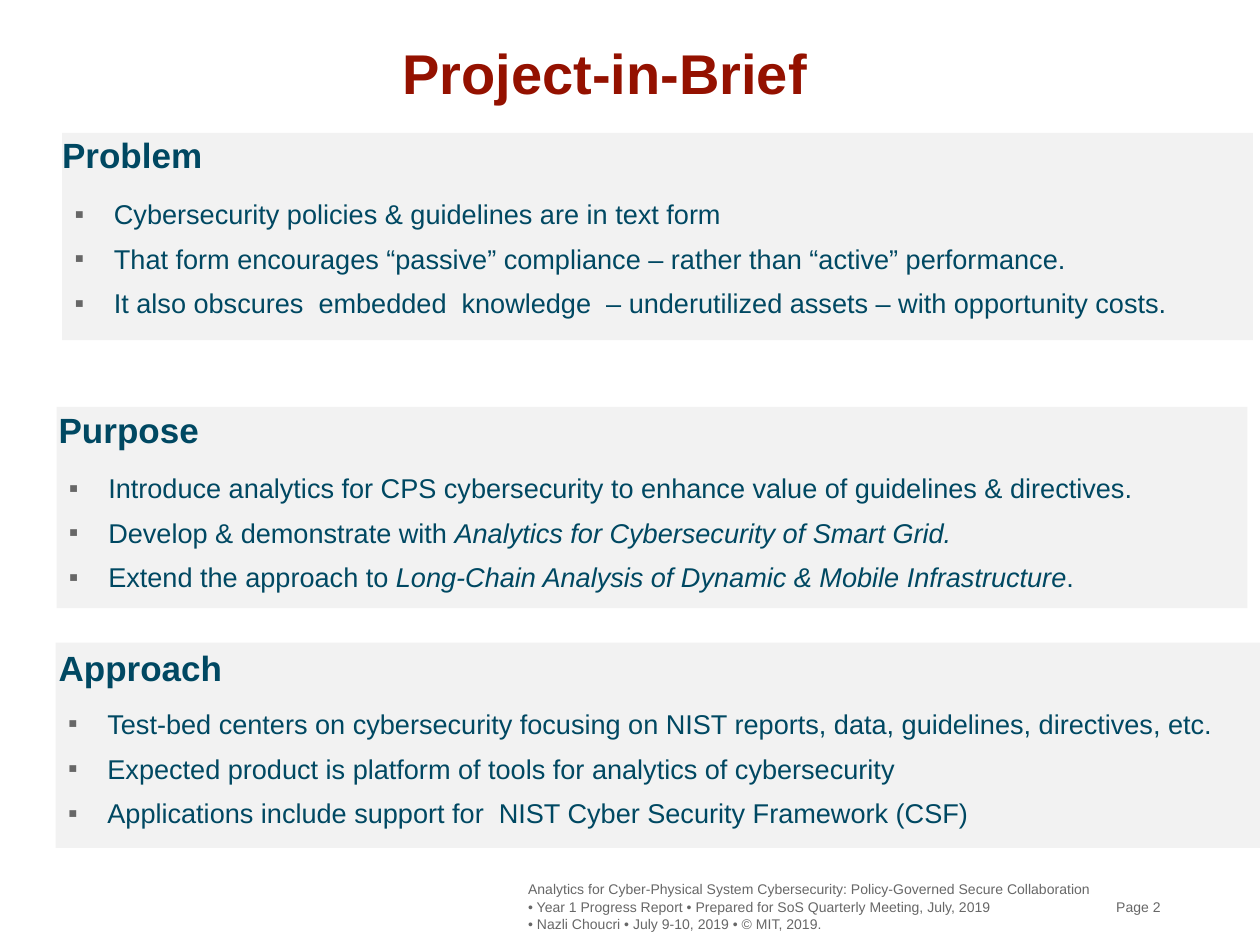
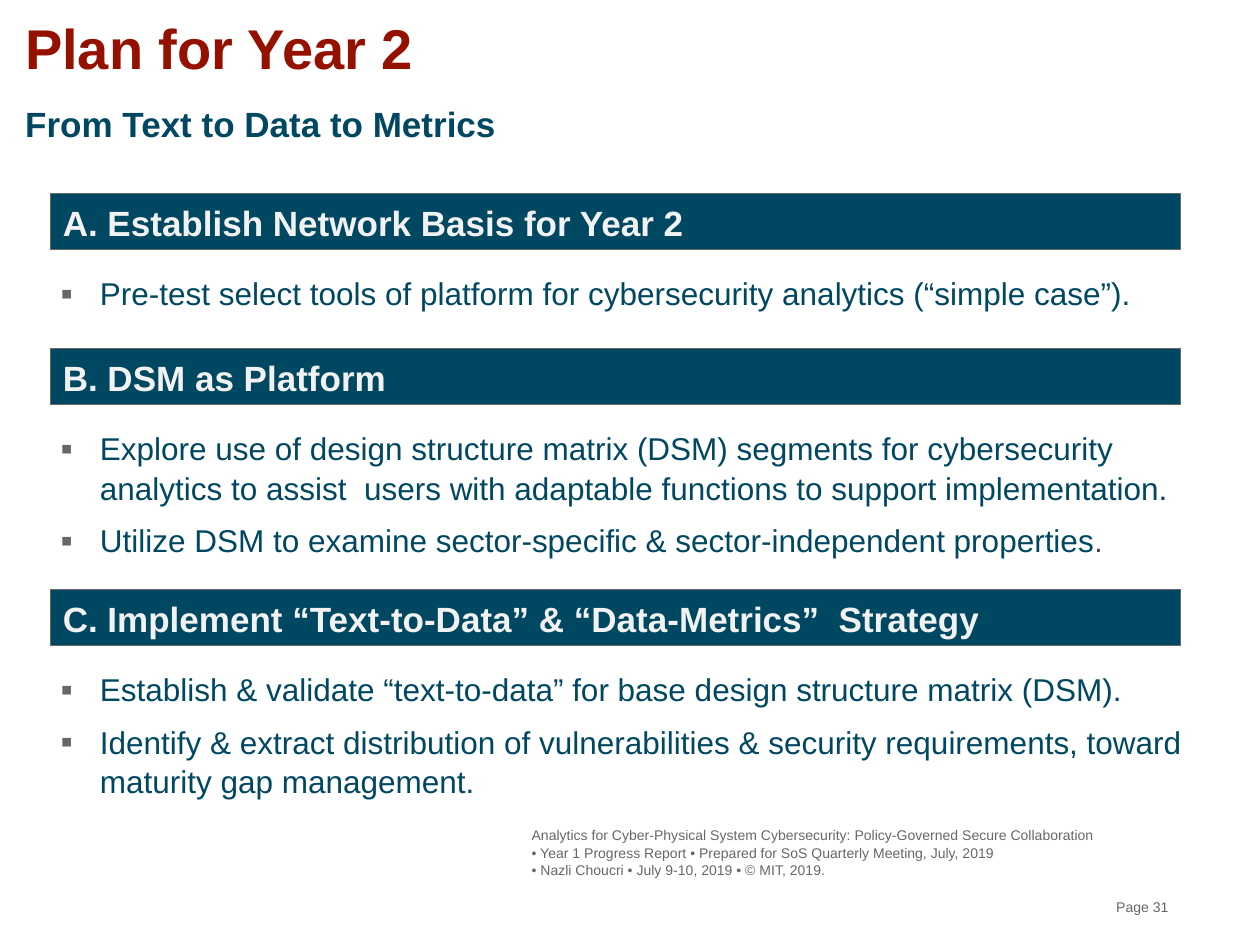
from dataclasses import dataclass

from lxml.etree import SubElement
from pptx import Presentation
from pptx.dml.color import RGBColor
from pptx.enum.shapes import MSO_SHAPE
from pptx.enum.text import MSO_ANCHOR as Anchor
from pptx.oxml.ns import qn
from pptx.shapes.autoshape import Shape
from pptx.slide import Slide
from pptx.util import Pt

FONT = "Arial"
RED = RGBColor(0x94, 0x11, 0x00)
TEAL = RGBColor(0x00, 0x48, 0x62)
GRAY = RGBColor(0x67, 0x67, 0x67)
DARK_GRAY = RGBColor(0x40, 0x40, 0x40)
PALE = RGBColor(0xF2, 0xF2, 0xF2)

LINE_SPACING = 1.05
BULLET_INDENT = 22.5
FOOTER_LINES = (
    "Analytics for Cyber-Physical System Cybersecurity: Policy-Governed Secure Collaboration",
    "• Year 1 Progress Report • Prepared for SoS Quarterly Meeting, July, 2019",
    "• Nazli Choucri • July 9-10, 2019 • © MIT, 2019.",
)


@dataclass(frozen=True)
class Box:
    left: float
    top: float
    width: float
    height: float


@dataclass(frozen=True)
class Style:
    size: float
    color: RGBColor
    bold: bool = False
    before: float = 0
    after: float = 0
    bullet_percent: int = 0


@dataclass(frozen=True)
class Run:
    text: str
    italic: bool = False
    size: float | None = None
    color: RGBColor | None = None


Paragraph = str | tuple[Run, ...]


@dataclass(frozen=True)
class Panel:
    heading: str
    heading_left: float
    heading_top: float
    box: Box
    points: tuple[Paragraph, ...]


@dataclass(frozen=True)
class Step:
    heading: str
    top: float
    body_height: float
    points: tuple[Paragraph, ...]


TITLE = Style(32, RED, bold=True)
HEADING = Style(20, TEAL, bold=True)
BAR_HEADING = Style(20, PALE, bold=True)
SMALL = Style(8, GRAY)
PANEL_POINT = Style(15.5, TEAL, before=3, after=3, bullet_percent=100)
STEP_POINT = Style(18, TEAL, before=7.2, bullet_percent=110)

PANELS = (
    Panel("Problem", 35.5, 75, Box(35.5, 76, 680.5, 118.5), (
        "Cybersecurity policies & guidelines are in text form",
        "That form encourages “passive” compliance – rather than “active” performance.",
        "It also obscures  embedded  knowledge  – underutilized assets – with opportunity costs.",
    )),
    Panel("Purpose", 33.5, 232.5, Box(32.3, 232.5, 680.5, 115), (
        "Introduce analytics for CPS cybersecurity to enhance value of guidelines & directives.",
        (Run("Develop & demonstrate with "),
         Run("Analytics for Cybersecurity of Smart Grid.", italic=True)),
        (Run("Extend the approach to "),
         Run("Long-Chain Analysis of Dynamic & Mobile Infrastructure", italic=True),
         Run(".")),
    )),
    Panel("Approach", 33.5, 368, Box(31.8, 367.3, 688.2, 117.3), (
        "Test-bed centers on cybersecurity focusing on NIST reports, data, guidelines, directives, etc.",
        "Expected product is platform of tools for analytics of cybersecurity",
        "Applications include support for  NIST Cyber Security Framework (CSF)",
    )),
)

STEPS = (
    Step("A. Establish Network Basis for Year 2", 110.7, 29, (
        "Pre-test select tools of platform for cybersecurity analytics (“simple case”).",
    )),
    Step("B. DSM as Platform", 199.3, 59, (
        "Explore use of design structure matrix (DSM) segments for cybersecurity "
        "analytics to assist  users with adaptable functions to support implementation.",
        (Run("Utilize DSM to examine sector-specific & sector-independent properties"),
         Run(".", size=17, color=DARK_GRAY)),
    )),
    Step("C. Implement “Text-to-Data” & “Data-Metrics”  Strategy", 337, 59, (
        "Establish & validate “text-to-data” for base design structure matrix (DSM).",
        "Identify & extract distribution of vulnerabilities & security requirements, "
        "toward maturity gap management.",
    )),
)


def add_bullet(paragraph, percent: int) -> None:
    properties = paragraph._p.get_or_add_pPr()
    properties.set("marL", str(Pt(BULLET_INDENT)))
    properties.set("indent", str(-Pt(BULLET_INDENT)))
    color = SubElement(properties, qn("a:buClr"))
    SubElement(color, qn("a:srgbClr"), val=str(GRAY))
    SubElement(properties, qn("a:buSzPct"), val=str(percent * 1000))
    SubElement(properties, qn("a:buFont"), typeface=FONT)
    SubElement(properties, qn("a:buChar"), char="▪")


def write(shape: Shape, paragraphs: tuple[Paragraph, ...], style: Style,
          insets: tuple[float, float, float, float] = (0, 0, 0, 0),
          anchor: Anchor = Anchor.TOP) -> None:
    """Fill a shape with text; insets run left, top, right, bottom."""
    frame = shape.text_frame
    frame.word_wrap = True
    frame.vertical_anchor = anchor
    (frame.margin_left, frame.margin_top,
     frame.margin_right, frame.margin_bottom) = map(Pt, insets)
    for index, content in enumerate(paragraphs):
        paragraph = frame.add_paragraph() if index else frame.paragraphs[0]
        if style.bullet_percent:
            add_bullet(paragraph, style.bullet_percent)
        paragraph.alignment = 1
        paragraph.line_spacing = LINE_SPACING
        paragraph.space_before = Pt(style.before if index else 0)
        paragraph.space_after = Pt(style.after)
        for part in (Run(content),) if isinstance(content, str) else content:
            run = paragraph.add_run()
            run.text = part.text
            run.font.name = FONT
            run.font.size = Pt(part.size or style.size)
            run.font.bold = style.bold
            run.font.italic = part.italic
            run.font.color.rgb = part.color or style.color


def add_text_box(slide: Slide, box: Box) -> Shape:
    return slide.shapes.add_textbox(Pt(box.left), Pt(box.top), Pt(box.width), Pt(box.height))


def add_rectangle(slide: Slide, box: Box, fill: RGBColor, line: RGBColor | None = None) -> Shape:
    shape = slide.shapes.add_shape(
        MSO_SHAPE.RECTANGLE, Pt(box.left), Pt(box.top), Pt(box.width), Pt(box.height))
    shape.shadow.inherit = False
    shape.fill.solid()
    shape.fill.fore_color.rgb = fill
    if line is None:
        shape.line.fill.background()
    else:
        shape.line.color.rgb = line
        shape.line.width = Pt(0.5)
    return shape


def add_slide(presentation, title: str, title_left: float, title_top: float,
              page: int, footer_left: float, footer_top: float) -> Slide:
    """Add a blank slide with its title, footer and page number."""
    slide = presentation.slides.add_slide(presentation.slide_layouts[6])
    title_box = add_text_box(slide, Box(title_left, title_top, 705.6 - title_left, 38))
    write(title_box, (title,), TITLE, anchor=Anchor.BOTTOM)
    footer_insets = (5.8, 2.9, 5.8, 2.9)
    footer = add_text_box(slide, Box(footer_left, footer_top, 333.4, 33.8))
    write(footer, FOOTER_LINES, SMALL, footer_insets, Anchor.MIDDLE)
    page_box = add_text_box(slide, Box(632, 501, 49, 33.8))
    write(page_box, (f"Page {page}",), SMALL, footer_insets, Anchor.MIDDLE)
    return slide


def add_panel(slide: Slide, panel: Panel) -> None:
    background = add_rectangle(slide, panel.box, PALE)
    write(background, panel.points, PANEL_POINT, (7.2, 36, 7.2, 7.2))
    heading = add_text_box(slide, Box(panel.heading_left, panel.heading_top, 650, 42.5))
    write(heading, (panel.heading,), HEADING)


def add_step(slide: Slide, step: Step) -> None:
    bar = add_rectangle(slide, Box(28.8, step.top, 645.8, 31.8), TEAL, GRAY)
    write(bar, (step.heading,), BAR_HEADING, (7.2, 5.8, 7.2, 5.8), Anchor.MIDDLE)
    body = add_text_box(slide, Box(28.8, step.top + 39.1, 663.1, step.body_height))
    write(body, step.points, STEP_POINT, (5.8, 5.8, 5.8, 5.8))


def main() -> None:
    presentation = Presentation()
    presentation.slide_width = Pt(720)
    presentation.slide_height = Pt(540)

    brief = add_slide(presentation, "Project-in-Brief", 230, 22.3, 2, 296, 501)
    for panel in PANELS:
        add_panel(brief, panel)

    plan = add_slide(presentation, "Plan for Year 2", 14.4, 8, 31, 298, 470.2)
    subtitle = add_text_box(plan, Box(14.4, 57.6, 705.6, 42.5))
    write(subtitle, ("From Text to Data to Metrics",), HEADING)
    for step in STEPS:
        add_step(plan, step)

    presentation.save("out.pptx")


if __name__ == "__main__":
    main()
